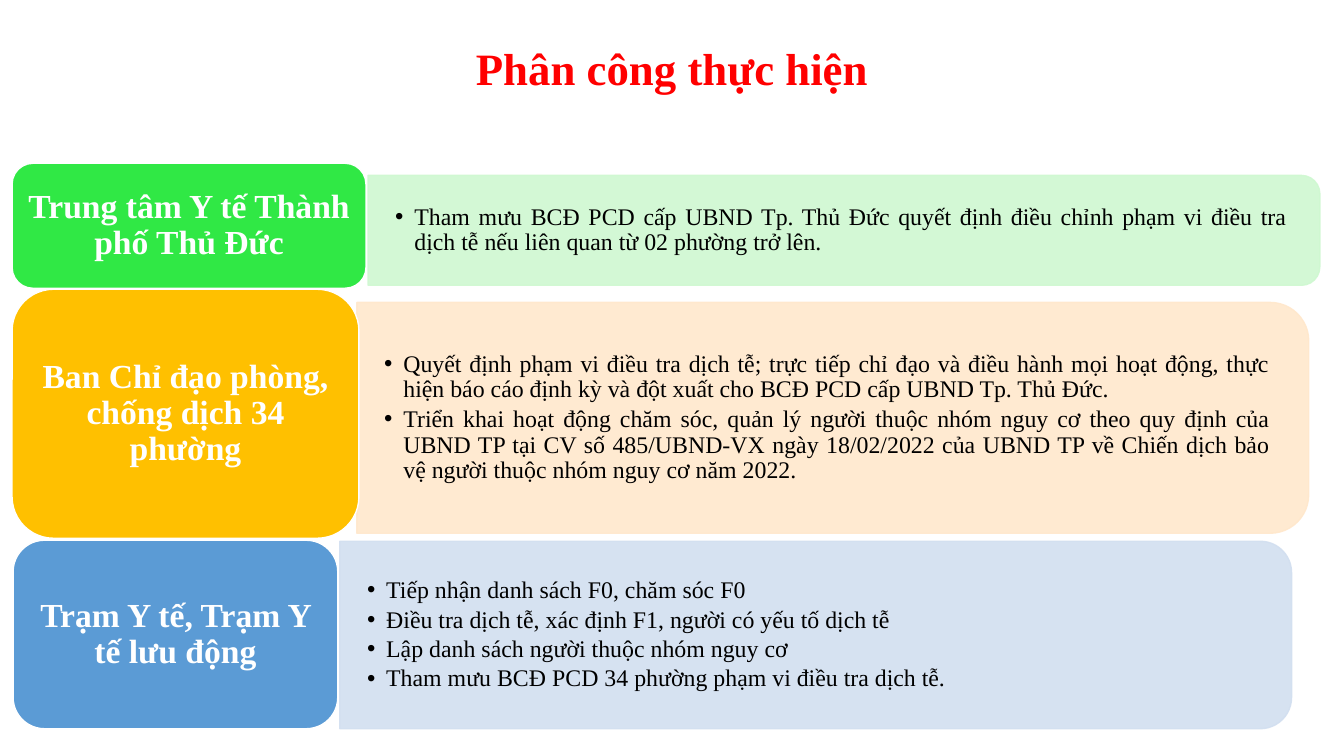
from lxml import etree
from pptx import Presentation
from pptx import util as u
from pptx.dml.color import RGBColor
from pptx.enum import shapes, text
from pptx.oxml import ns

RED = RGBColor(0xFF, 0x00, 0x00)
BLACK = RGBColor(0x00, 0x00, 0x00)
WHITE = RGBColor(0xFF, 0xFF, 0xFF)
GREEN = RGBColor(0x30, 0xE8, 0x45)
PALE_GREEN = RGBColor(0xCF, 0xF8, 0xD1)
AMBER = RGBColor(0xFF, 0xC0, 0x00)
PALE_AMBER = RGBColor(0xFF, 0xE8, 0xCC)
BLUE = RGBColor(0x5B, 0x9B, 0xD5)
PALE_BLUE = RGBColor(0xD2, 0xDF, 0xF0)

PANEL_W = 9.44
CORNER_INSET = 0.29 * 0.17

ROWS = [
    ("Trung tâm Y tế Thành phố Thủ Đức", GREEN, (0.12, 1.62, 3.51, 1.24),
     PALE_GREEN, (3.65, 1.74, 1.09),
     ["Tham mưu BCĐ PCD cấp UBND Tp. Thủ Đức quyết định điều chỉnh phạm vi "
      "điều tra dịch tễ nếu liên quan từ 02 phường trở lên."]),
    ("Ban Chỉ đạo phòng, chống dịch 34 phường", AMBER, (0.12, 2.87, 3.44, 2.47),
     PALE_AMBER, (3.54, 3, 2.29),
     ["Quyết định phạm vi điều tra dịch tễ; trực tiếp chỉ đạo và điều hành mọi "
      "hoạt động, thực hiện báo cáo định kỳ và đột xuất cho BCĐ PCD cấp UBND "
      "Tp. Thủ Đức.",
      "Triển khai hoạt động chăm sóc, quản lý người thuộc nhóm nguy cơ theo quy "
      "định của UBND TP tại CV số 485/UBND-VX ngày 18/02/2022 của UBND TP về "
      "Chiến dịch bảo vệ người thuộc nhóm nguy cơ năm 2022."]),
    ("Trạm Y tế, Trạm Y tế lưu động", BLUE, (0.13, 5.36, 3.22, 1.87),
     PALE_BLUE, (3.37, 5.37, 1.86),
     ["Tiếp nhận danh sách F0, chăm sóc F0",
      "Điều tra dịch tễ, xác định F1, người có yếu tố dịch tễ",
      "Lập danh sách người thuộc nhóm nguy cơ",
      "Tham mưu BCĐ PCD 34 phường phạm vi điều tra dịch tễ."]),
]


class SlideBuilder:
    """Holds the text style and the slide, and adds each kind of element."""

    def __init__(self, slide):
        self.s = slide
        self.font = {"name": "Times New Roman", "bold": True}

    def place(self, sp, left, top, width, height):
        box = {"left": left, "top": top, "width": width, "height": height}
        for name, value in box.items():
            setattr(sp, name, u.Inches(value))

    def set_text(self, sp, lines, color, align, anchor, para=None, frame=None, **font):
        tf = sp.text_frame
        frame_format = {"word_wrap": True, "vertical_anchor": anchor,
                        "auto_size": text.MSO_AUTO_SIZE.NONE, **(frame or {})}
        for name, value in frame_format.items():
            setattr(tf, name, value)
        para_format = {"alignment": align, "space_before": u.Pt(0), **(para or {})}
        for i, line in enumerate(lines):
            p = tf.paragraphs[0] if i == 0 else tf.add_paragraph()
            for name, value in para_format.items():
                setattr(p, name, value)
            r = p.add_run()
            r.text = line
            for name, value in {**self.font, **font}.items():
                setattr(r.font, name, value)
            r.font.color.rgb = color

    def shape(self, kind, box, fill, line):
        sp = self.s.shapes.add_shape(kind, *(u.Inches(v) for v in box))
        sp.shadow.inherit = False
        sp.fill.solid()
        sp.fill.fore_color.rgb = fill
        sp.line.color.rgb = line
        sp.line.width = u.Pt(1)
        return sp

    def title(self, words):
        sp = self.s.shapes.title
        self.place(sp, 3.38, 0.35, 6.57, 0.64)
        self.set_text(sp, [words], RED, text.PP_ALIGN.CENTER, text.MSO_ANCHOR.TOP,
                      size=u.Pt(32))

    def label(self, words, fill, box):
        sp = self.shape(shapes.MSO_SHAPE.ROUNDED_RECTANGLE, box, fill, WHITE)
        self.set_text(sp, [words], WHITE, text.PP_ALIGN.CENTER,
                      text.MSO_ANCHOR.MIDDLE, {"line_spacing": 0.9}, size=u.Pt(24))

    def panel(self, fill, left, top, height):
        box = (left + (PANEL_W - height) / 2, top + (height - PANEL_W) / 2,
               height, PANEL_W)
        sp = self.shape(shapes.MSO_SHAPE.ROUND_2_SAME_RECTANGLE, box, fill, fill)
        sp.rotation = 90
        for color in sp.element.spPr.iter(ns.qn("a:srgbClr")):
            etree.SubElement(color, ns.qn("a:alpha")).set("val", "90000")
        return sp

    def bullets(self, sp, panel, lines, left, top, height):
        inset = CORNER_INSET * height
        self.place(sp, left, top + inset, PANEL_W - inset, height - 2 * inset)
        panel.element.addnext(sp.element)
        side, edge = u.Inches(0.27), u.Inches(0.14)
        self.set_text(sp, lines, BLACK, text.PP_ALIGN.JUSTIFY, text.MSO_ANCHOR.MIDDLE,
                      {"line_spacing": 0.9, "space_after": u.Pt(2.7)},
                      {"margin_left": side, "margin_right": side,
                       "margin_top": edge, "margin_bottom": edge},
                      size=u.Pt(17), bold=False)
        for p in sp.text_frame.paragraphs:
            pPr = p._p.get_or_add_pPr()
            pPr.set("marL", str(u.Inches(0.19)))
            pPr.set("indent", str(-u.Inches(0.19)))
            etree.SubElement(pPr, ns.qn("a:buChar")).set("char", "•")


def main():
    prs = Presentation()
    prs.slide_width, prs.slide_height = u.Inches(13.33), u.Inches(7.5)
    s = prs.slides.add_slide(prs.slide_layouts.get_by_name("Comparison"))
    b = SlideBuilder(s)
    b.title("Phân công thực hiện")
    bodies = list(s.placeholders)[1:]
    for body, (name, color, box, pale, area, lines) in zip(bodies, ROWS):
        panel = b.panel(pale, *area)
        b.bullets(body, panel, lines, *area)
        b.label(name, color, box)
    for spare in bodies[len(ROWS):]:
        spare.element.getparent().remove(spare.element)
    prs.save("out.pptx")


if __name__ == "__main__":
    main()
